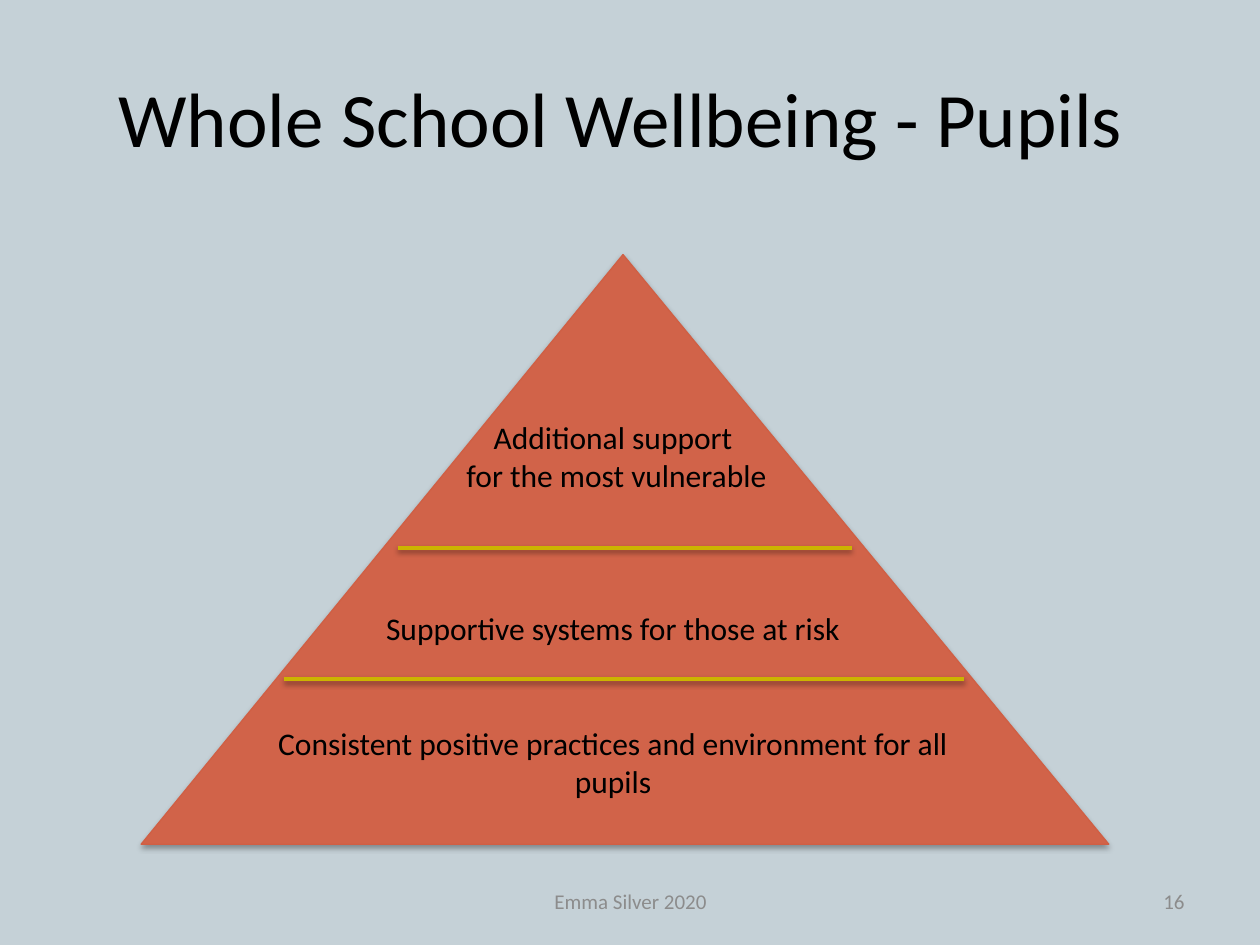
from lxml import etree
from pptx import Presentation
from pptx.dml.color import RGBColor
from pptx.enum.shapes import MSO_CONNECTOR, MSO_SHAPE
from pptx.enum.text import MSO_ANCHOR as Anchor, PP_ALIGN as Align
from pptx.oxml.ns import qn
from pptx.util import Inches, Pt

COLOURS = {
    "background": "C5D1D7",
    "pyramid": "D16349",
    "outline": "D05F44",
    "divider": "CCB400",
    "text": "000000",
    "footer": "8C8C8C",
}
COLOURS = {name: RGBColor.from_string(value) for name, value in COLOURS.items()}


def add_text(slide, box, paragraphs, size, colour, align, anchor):
    """Add a text box; paragraphs are (text, points of space before)."""
    shape = slide.shapes.add_textbox(*map(Inches, box))
    frame = shape.text_frame
    frame.word_wrap = True
    frame.vertical_anchor = anchor
    for index, (text, space) in enumerate(paragraphs):
        paragraph = frame.add_paragraph() if index else frame.paragraphs[0]
        paragraph.alignment = align
        paragraph.space_before = Pt(space)
        run = paragraph.add_run()
        run.text = text
        for name, value in {"name": "Calibri", "size": Pt(size)}.items():
            setattr(run.font, name, value)
        run.font.color.rgb = COLOURS[colour]


def add_shadow(shape, opacity, distance):
    """Give the shape a soft black shadow straight below it."""
    properties = shape._element.spPr
    for old in properties.findall(qn("a:effectLst")):
        properties.remove(old)
    effects = etree.SubElement(properties, qn("a:effectLst"))
    shadow = etree.SubElement(
        effects, qn("a:outerShdw"), blurRad=str(Pt(3.1)),
        dist=str(Pt(distance)), dir="5400000", rotWithShape="0")
    black = etree.SubElement(shadow, qn("a:srgbClr"), val="000000")
    etree.SubElement(black, qn("a:alpha"), val=str(opacity * 1000))


presentation = Presentation()
presentation.slide_width = Inches(10)
presentation.slide_height = Inches(7.5)
slide = presentation.slides.add_slide(presentation.slide_layouts[6])
slide.background.fill.solid()
slide.background.fill.fore_color.rgb = COLOURS["background"]

# Title
add_text(slide, (0.5, 0.3, 9, 1.25), [("Whole School Wellbeing - Pupils ", 0)],
         44, "text", Align.CENTER, Anchor.MIDDLE)

# Pyramid
pyramid = slide.shapes.add_shape(
    MSO_SHAPE.ISOSCELES_TRIANGLE,
    Inches(1.12), Inches(2.02), Inches(7.68), Inches(4.68))
pyramid.adjustments[0] = 0.498
pyramid.fill.solid()
pyramid.fill.fore_color.rgb = COLOURS["pyramid"]
pyramid.line.color.rgb = COLOURS["outline"]
pyramid.line.width = Pt(0.75)
add_shadow(pyramid, 35, 1.8)

# Tier labels, spaced in whole lines of 18 pt text
LINE = 22
tiers = [
    ("Additional support", 0),
    (" for the most vulnerable", 0),
    ("Supportive systems for those at risk", 3 * LINE),
    ("Consistent positive practices and environment for all pupils", 2 * LINE),
]
add_text(slide, (2.07, 3.27, 5.59, 3.43), tiers,
         18, "text", Align.CENTER, Anchor.TOP)

# Dividers between the tiers
for left, right, y in [(3.16, 6.76, 4.35), (2.25, 7.65, 5.39)]:
    divider = slide.shapes.add_connector(
        MSO_CONNECTOR.STRAIGHT, Inches(left), Inches(y), Inches(right), Inches(y))
    divider.line.color.rgb = COLOURS["divider"]
    divider.line.width = Pt(2)
    add_shadow(divider, 38, 1.6)

# Slide number and footer
for left, width, text, align in [(7.17, 2.33, "16", Align.RIGHT),
                                 (3.42, 3.17, "Emma Silver 2020", Align.CENTER)]:
    add_text(slide, (left, 6.95, width, 0.4), [(text, 0)],
             12, "footer", align, Anchor.MIDDLE)

presentation.save("out.pptx")
